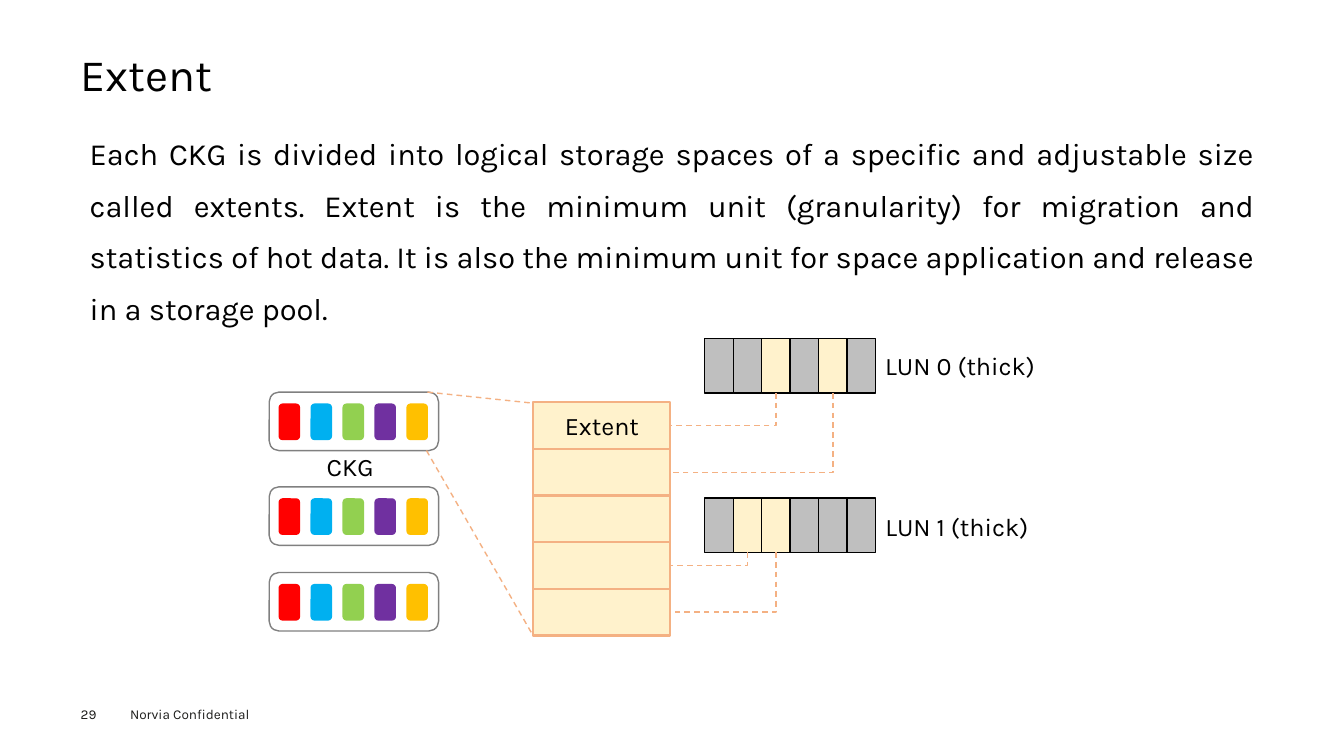
from dataclasses import dataclass

from lxml import etree
from pptx import Presentation
from pptx.dml.color import RGBColor
from pptx.enum.dml import MSO_LINE
from pptx.enum.shapes import MSO_CONNECTOR, MSO_SHAPE
from pptx.enum.text import MSO_ANCHOR, MSO_AUTO_SIZE, PP_ALIGN
from pptx.oxml.ns import qn
from pptx.shapes.autoshape import Shape
from pptx.shapes.connector import Connector
from pptx.slide import Slide
from pptx.util import Inches, Pt

RECTANGLE, ROUNDED = MSO_SHAPE.RECTANGLE, MSO_SHAPE.ROUNDED_RECTANGLE
STRAIGHT, ELBOW = MSO_CONNECTOR.STRAIGHT, MSO_CONNECTOR.ELBOW
LEFT, CENTER, JUSTIFY = PP_ALIGN.LEFT, PP_ALIGN.CENTER, PP_ALIGN.JUSTIFY
TOP, MIDDLE = MSO_ANCHOR.TOP, MSO_ANCHOR.MIDDLE
NO_AUTOFIT = MSO_AUTO_SIZE.NONE
DASH = MSO_LINE.DASH
BOTTOM_SITE, RIGHT_SITE = 2, 3

FONT = "Karla"
BLACK, WHITE, INK = "000000", "FFFFFF", "1D1D1B"
CREAM, ORANGE, GREY, FRAME_GREY = "FFF2CC", "F4B183", "BFBFBF", "808080"
CHUNK_COLORS = ["FF0000", "00B0F0", "92D050", "7030A0", "FFC000"]

CKG_LEFT, CKG_WIDTH, CKG_HEIGHT = 2.67, 1.68, 0.58
CKG_TOPS = [3.89, 4.83, 5.68]
CHUNK_PITCH = 0.317
EXTENT_LEFT, EXTENT_TOP, EXTENT_WIDTH, EXTENT_HEIGHT = 5.29, 3.99, 1.36, 0.463
EXTENT_COUNT = 5
LUN_LEFT, LUN_HEIGHT, CELL_WIDTH, CELL_COUNT = 6.99, 0.54, 0.2825, 6

BODY = (
    "Each CKG is divided into logical storage spaces of a specific and adjustable size "
    "called extents. Extent is the minimum unit (granularity) for migration and "
    "statistics of hot data. It is also the minimum unit for space application and "
    "release in a storage pool."
)


@dataclass(frozen=True)
class Box:
    left: float
    top: float
    width: float
    height: float

    def lengths(self) -> list[int]:
        return [Inches(n) for n in (self.left, self.top, self.width, self.height)]


@dataclass(frozen=True)
class Label:
    text: str
    box: Box
    size: float = 18
    color: str = BLACK
    align: PP_ALIGN = LEFT
    spacing: float = 1.0
    insets: tuple[float, float] = (0.09, 0.05)


@dataclass(frozen=True)
class Lun:
    label: Label
    top: float
    extents_by_cell: dict[int, int]


LABELS = [
    Label("Norvia Confidential", Box(1.2, 6.95, 1.6, 0.27), 9.7, INK),
    Label("29", Box(0.8, 7, 0.55, 0.16), 9.7, INK, insets=(0, 0)),
    Label(BODY, Box(0.8, 1.15, 11.73, 5.33), 22, align=JUSTIFY, spacing=1.4, insets=(0.09, 0.04)),
    Label("CKG", Box(3.15, 4.43, 0.69, 0.4)),
]
TITLE = Label("Extent", Box(0.8, 0.49, 11.73, 0.54), 32, spacing=0.9, insets=(0, 0))
LUNS = [
    Lun(Label("LUN 0 (thick)", Box(8.69, 3.43, 2.07, 0.4)), 3.36, {2: 0, 4: 1}),
    Lun(Label("LUN 1 (thick)", Box(8.69, 5.02, 1.99, 0.4)), 4.94, {1: 3, 2: 4}),
]


def rgb(color: str) -> RGBColor:
    return RGBColor.from_string(color)


def set_attributes(target: object, values: dict[str, object]) -> None:
    for name, value in values.items():
        setattr(target, name, value)


def write_text(shape: Shape, label: Label, anchor: MSO_ANCHOR = TOP) -> None:
    side, edge = (Inches(inset) for inset in label.insets)
    frame = shape.text_frame
    frame.text = label.text
    set_attributes(frame, {
        "word_wrap": True, "auto_size": NO_AUTOFIT, "vertical_anchor": anchor,
        "margin_left": side, "margin_right": side, "margin_top": edge, "margin_bottom": edge,
    })
    paragraph = frame.paragraphs[0]
    set_attributes(paragraph, {"alignment": label.align, "line_spacing": label.spacing})
    set_attributes(paragraph.font, {"name": FONT, "size": Pt(label.size)})
    paragraph.font.color.rgb = rgb(label.color)


def add_label(slide: Slide, label: Label) -> None:
    write_text(slide.shapes.add_textbox(*label.box.lengths()), label)


def add_block(slide: Slide, kind: MSO_SHAPE, box: Box, fill: str, line: str, weight: float = 1) -> Shape:
    shape = slide.shapes.add_shape(kind, *box.lengths())
    shape.shadow.inherit = False
    shape.fill.solid()
    shape.fill.fore_color.rgb = rgb(fill)
    shape.line.color.rgb = rgb(line)
    shape.line.width = Pt(weight)
    return shape


def style_connector(connector: Connector) -> None:
    connector.line.color.rgb = rgb(ORANGE)
    set_attributes(connector.line, {"width": Pt(1), "dash_style": DASH})
    etree.SubElement(connector._element.spPr, qn("a:effectLst"))


def add_zoom_line(slide: Slide, start: tuple[float, float], end: tuple[float, float]) -> None:
    style_connector(slide.shapes.add_connector(STRAIGHT, *map(Inches, start + end)))


def add_mapping(slide: Slide, cell: Shape, extent: Shape) -> None:
    start_x, start_y = cell.left + cell.width // 2, cell.top + cell.height
    end_x, end_y = extent.left + extent.width, extent.top + extent.height // 2
    connector = slide.shapes.add_connector(ELBOW, start_x, start_y, end_x, end_y)
    connector.begin_connect(cell, BOTTOM_SITE)
    connector.end_connect(extent, RIGHT_SITE)
    drop, run = end_y - start_y, start_x - end_x
    properties = connector._element.spPr
    properties.find(qn("a:prstGeom")).set("prst", "bentConnector2")
    transform = properties.find(qn("a:xfrm"))
    transform.attrib.clear()
    transform.set("rot", "5400000")
    set_attributes(connector, {
        "left": (start_x + end_x - drop) // 2, "top": (start_y + end_y - run) // 2,
        "width": drop, "height": run,
    })
    style_connector(connector)


def add_ckg(slide: Slide, top: float) -> None:
    add_block(slide, ROUNDED, Box(CKG_LEFT, top, CKG_WIDTH, CKG_HEIGHT), WHITE, FRAME_GREY)
    for index, color in enumerate(CHUNK_COLORS):
        chunk = Box(CKG_LEFT + 0.1 + index * CHUNK_PITCH, top + 0.12, 0.2, 0.35)
        add_block(slide, ROUNDED, chunk, color, color)


def add_extents(slide: Slide) -> list[Shape]:
    boxes = [
        Box(EXTENT_LEFT, EXTENT_TOP + index * EXTENT_HEIGHT, EXTENT_WIDTH, EXTENT_HEIGHT)
        for index in range(EXTENT_COUNT)
    ]
    extents = [add_block(slide, RECTANGLE, box, CREAM, ORANGE, 1.5) for box in boxes]
    write_text(extents[0], Label("Extent", boxes[0], align=CENTER), MIDDLE)
    return extents


def add_lun(slide: Slide, lun: Lun, extents: list[Shape]) -> None:
    cells = [
        add_block(
            slide, RECTANGLE,
            Box(LUN_LEFT + index * CELL_WIDTH, lun.top, CELL_WIDTH, LUN_HEIGHT),
            CREAM if index in lun.extents_by_cell else GREY, BLACK,
        )
        for index in range(CELL_COUNT)
    ]
    for cell, extent in lun.extents_by_cell.items():
        add_mapping(slide, cells[cell], extents[extent])
    add_label(slide, lun.label)


def main() -> None:
    presentation = Presentation()
    set_attributes(presentation, {"slide_width": Inches(13.33), "slide_height": Inches(7.5)})
    slide = presentation.slides.add_slide(presentation.slide_layouts[5])
    title = slide.shapes.title
    title.left, title.top, title.width, title.height = TITLE.box.lengths()
    write_text(title, TITLE, MIDDLE)
    for label in LABELS:
        add_label(slide, label)
    for top in CKG_TOPS:
        add_ckg(slide, top)
    extents = add_extents(slide)
    add_zoom_line(slide, (4.24, CKG_TOPS[0]), (EXTENT_LEFT, 4))
    add_zoom_line(slide, (4.23, CKG_TOPS[0] + CKG_HEIGHT), (EXTENT_LEFT, 6.31))
    for lun in LUNS:
        add_lun(slide, lun, extents)
    presentation.save("out.pptx")


if __name__ == "__main__":
    main()
